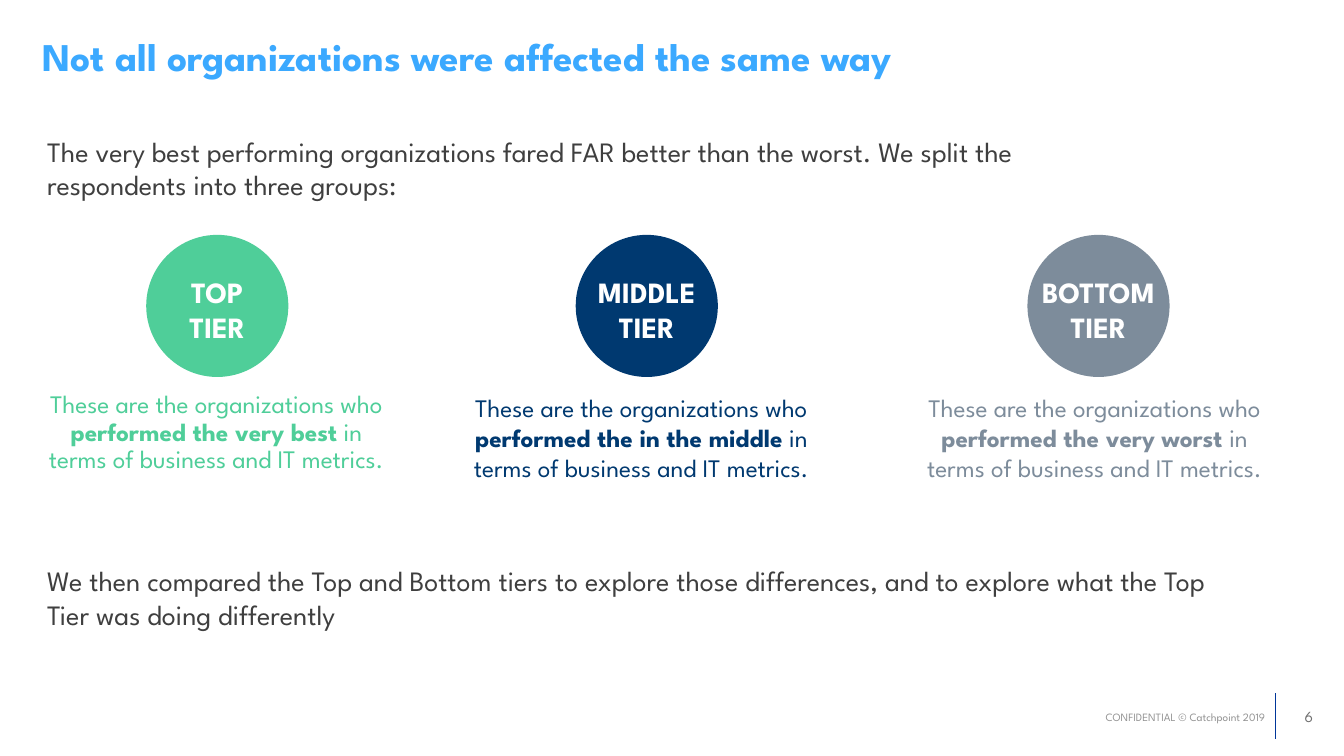
from dataclasses import dataclass

from lxml.etree import SubElement
from pptx import Presentation
from pptx.dml.color import RGBColor
from pptx.enum.shapes import MSO_CONNECTOR as Connector, MSO_SHAPE as Shape
from pptx.enum.text import MSO_ANCHOR as Anchor, MSO_AUTO_SIZE as AutoSize, PP_ALIGN as Align
from pptx.oxml.ns import qn
from pptx.util import Inches, Pt


@dataclass(frozen=True)
class Theme:
    font: str = "League Spartan"
    title: str = "3BA9FF"
    body: str = "3F3F3F"
    footer: str = "939393"
    number: str = "6F6F6F"
    rule: str = "003699"
    white: str = "FFFFFF"
    title_size: int = 28
    label_size: int = 21
    body_size: int = 20
    detail_size: int = 18
    number_size: int = 11
    footer_size: int = 8


@dataclass(frozen=True)
class Area:
    left: float
    top: float
    width: float
    height: float

    def lengths(self) -> tuple:
        return tuple(Inches(n) for n in (self.left, self.top, self.width, self.height))


@dataclass(frozen=True)
class Style:
    size: int
    color: str
    bold: bool = False
    align: Align = Align.LEFT
    anchor: Anchor = Anchor.TOP
    line_spacing: float | None = None
    margin_left: float = 0.1
    margin_top: float = 0.05


@dataclass(frozen=True)
class Span:
    text: str
    bold: bool = False


@dataclass(frozen=True)
class Tier:
    label: str
    color: str
    circle_left: float
    label_width: float
    detail: Area
    spans: tuple[Span, ...]
    line_spacing: float | None = None


THEME = Theme()
CIRCLE_TOP, CIRCLE_SIZE = 2.33, 1.41
LABEL_TOP, LABEL_HEIGHT = 2.56, 0.97
LOWERED = 0.09
BODY = Style(THEME.body_size, THEME.body, margin_top=LOWERED)
OPENING = Span("These are the organizations who ")

TIERS = (
    Tier("TOP TIER", "4FCE99", 1.45, 1.18, Area(0.12, 3.8, 3.82, 1.29),
         (OPENING, Span("performed the very best", True),
          Span(" in terms of business and IT metrics.")), 0.9),
    Tier("MIDDLE TIER", "003970", 5.71, 1.29, Area(4.2, 3.8, 4.09, 1.52),
         (OPENING, Span("performed the in the middle", True),
          Span(" in terms of business and IT metrics."))),
    Tier("BOTTOM TIER", "7D8C9B", 10.19, 1.41, Area(8.83, 3.8, 3.82, 1.41),
         (OPENING, Span("performed the very worst ", True),
          Span("in terms of business and IT metrics."))),
)


def write(box, spans: tuple[Span, ...], style: Style) -> None:
    frame = box.text_frame
    frame.word_wrap = True
    frame.auto_size = AutoSize.NONE
    frame.vertical_anchor = style.anchor
    frame.margin_left, frame.margin_right = Inches(style.margin_left), Inches(0.1)
    frame.margin_top, frame.margin_bottom = Inches(style.margin_top), Inches(0.05)
    para = frame.paragraphs[0]
    para.alignment = style.align
    para.line_spacing = style.line_spacing
    para.font.name = THEME.font
    para.font.size = Pt(style.size)
    para.font.bold = style.bold
    para.font.color.rgb = RGBColor.from_string(style.color)
    for span in spans:
        run = para.add_run()
        run.text = span.text
        if span.bold:
            run.font.bold = True


def add_text(shapes, area: Area, spans: tuple[Span, ...], style: Style) -> None:
    write(shapes.add_textbox(*area.lengths()), spans, style)


def add_title(page, text: str) -> None:
    title = page.shapes.title
    title.left, title.top, title.width, title.height = Area(0.32, 0.32, 12.65, 0.78).lengths()
    write(title, (Span(text),),
          Style(THEME.title_size, THEME.title, bold=True, line_spacing=0.9))


def add_tier(page, tier: Tier) -> None:
    group = page.shapes.add_group_shape()
    circle_area = Area(tier.circle_left, CIRCLE_TOP, CIRCLE_SIZE, CIRCLE_SIZE)
    circle = group.shapes.add_shape(Shape.OVAL, *circle_area.lengths())
    circle.shadow.inherit = False
    circle.fill.solid()
    circle.fill.fore_color.rgb = RGBColor.from_string(tier.color)
    circle.line.fill.background()
    label_left = tier.circle_left + (CIRCLE_SIZE - tier.label_width) / 2
    add_text(group.shapes, Area(label_left, LABEL_TOP, tier.label_width, LABEL_HEIGHT),
             (Span(tier.label),),
             Style(THEME.label_size, THEME.white, bold=True, align=Align.CENTER,
                   anchor=Anchor.MIDDLE, margin_top=LOWERED))
    add_text(page.shapes, tier.detail, tier.spans,
             Style(THEME.detail_size, tier.color, align=Align.CENTER,
                   line_spacing=tier.line_spacing, margin_left=0.33, margin_top=LOWERED))


def add_footer(page) -> None:
    rule = page.shapes.add_connector(
        Connector.STRAIGHT, Inches(12.65), Inches(6.88), Inches(12.65), Inches(7.33))
    rule.line.color.rgb = RGBColor.from_string(THEME.rule)
    rule.line.width = Pt(0.5)
    SubElement(rule._element.spPr, qn("a:effectLst"))
    add_text(page.shapes, Area(12.72, 6.97, 0.52, 0.29), (Span("6"),),
             Style(THEME.number_size, THEME.number, align=Align.CENTER))
    add_text(page.shapes, Area(1.9, 6.88, 10.75, 0.47),
             (Span("CONFIDENTIAL © Catchpoint 2019"),),
             Style(THEME.footer_size, THEME.footer, align=Align.RIGHT, anchor=Anchor.MIDDLE))


def main() -> None:
    deck = Presentation()
    deck.slide_width, deck.slide_height = Inches(13.33), Inches(7.5)
    page = deck.slides.add_slide(deck.slide_layouts.get_by_name("Title Only"))
    page.background.fill.solid()
    page.background.fill.fore_color.rgb = RGBColor.from_string(THEME.white)
    add_title(page, "Not all organizations were affected the same way")
    add_text(page.shapes, Area(0.37, 1.24, 10.07, 0.78),
             (Span("The very best performing organizations fared FAR better than the worst. "
                   "We split the respondents into three groups:"),), BODY)
    for tier in TIERS:
        add_tier(page, tier)
    add_text(page.shapes, Area(0.37, 5.5, 11.98, 0.78),
             (Span("We then compared the Top and Bottom tiers to explore those differences, "
                   "and to explore what the Top Tier was doing differently"),), BODY)
    add_footer(page)
    deck.save("out.pptx")


if __name__ == "__main__":
    main()
